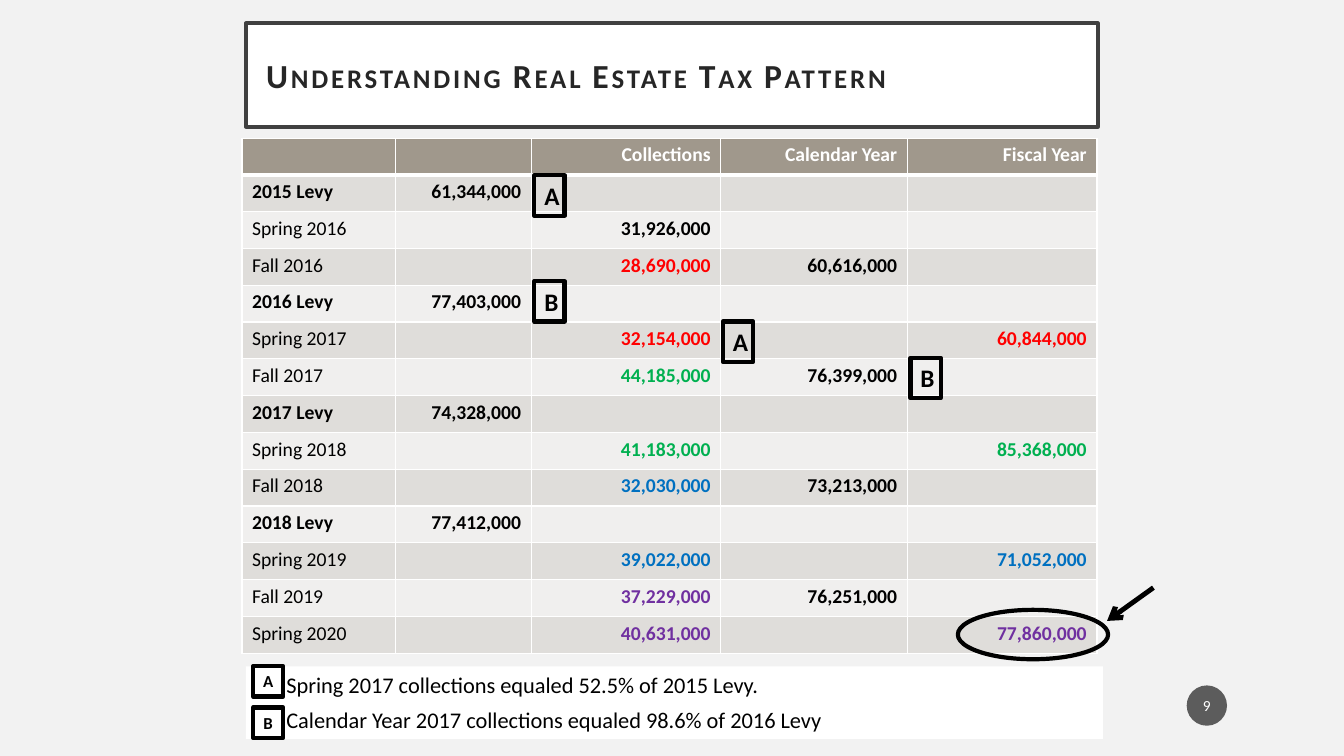
from dataclasses import dataclass

from lxml import etree
from pptx import Presentation
from pptx.dml.color import RGBColor
from pptx.enum.shapes import MSO_CONNECTOR, MSO_SHAPE
from pptx.enum.text import MSO_ANCHOR, PP_ALIGN
from pptx.oxml.ns import qn
from pptx.util import Pt

RECT, OVAL = MSO_SHAPE.RECTANGLE, MSO_SHAPE.OVAL
LINE = MSO_CONNECTOR.STRAIGHT
LEFT, MID, RIGHT = PP_ALIGN.LEFT, PP_ALIGN.CENTER, PP_ALIGN.RIGHT
TOP, CENTER = MSO_ANCHOR.TOP, MSO_ANCHOR.MIDDLE
PX = 9144  # 100 px to the inch


@dataclass(frozen=True)
class Theme:
    font: str = "Calibri"
    back: str = "F2F2F2"
    white: str = "FFFFFF"
    black: str = "000000"
    frame: str = "404040"
    title: str = "262626"
    badge: str = "1D1D1D"
    head: str = "A0988C"
    bands: tuple[str, str] = ("DFDDDA", "F0EFEE")
    red: str = "FF0000"
    green: str = "00B050"
    blue: str = "0070C0"
    purple: str = "7030A0"
    big: int = 24
    mark: int = 18
    note: int = 16
    cell: int = 14
    key: int = 12
    page: int = 11


T = Theme()


@dataclass(frozen=True)
class Box:
    x: int
    y: int
    w: int
    h: int

    def emu(self) -> tuple[int, ...]:
        return tuple(v * PX for v in (self.x, self.y, self.w, self.h))


@dataclass(frozen=True)
class Row:
    label: str
    levy: str = ""
    paid: str = ""
    year: str = ""
    fiscal: str = ""
    tone: str = T.black


@dataclass(frozen=True)
class Mark:
    letter: str
    box: Box
    size: int


HEADS = ("", "", "Collections", "Calendar Year", "Fiscal Year")
ROWS = (
    Row("2015 Levy", levy="61,344,000"),
    Row("Spring 2016", paid="31,926,000"),
    Row("Fall 2016", paid="28,690,000", year="60,616,000", tone=T.red),
    Row("2016 Levy", levy="77,403,000"),
    Row("Spring 2017", paid="32,154,000", fiscal="60,844,000", tone=T.red),
    Row("Fall 2017", paid="44,185,000", year="76,399,000", tone=T.green),
    Row("2017 Levy", levy="74,328,000"),
    Row("Spring 2018", paid="41,183,000", fiscal="85,368,000", tone=T.green),
    Row("Fall 2018", paid="32,030,000", year="73,213,000", tone=T.blue),
    Row("2018 Levy", levy="77,412,000"),
    Row("Spring 2019", paid="39,022,000", fiscal="71,052,000", tone=T.blue),
    Row("Fall 2019", paid="37,229,000", year="76,251,000", tone=T.purple),
    Row("Spring 2020", paid="40,631,000", fiscal="77,860,000", tone=T.purple),
)
COLS = (152, 135, 188, 185, 188)
MARKS = (
    Mark("A", Box(530, 174, 30, 40), T.mark),
    Mark("B", Box(903, 355, 30, 40), T.mark),
    Mark("B", Box(530, 279, 30, 40), T.mark),
    Mark("A", Box(717, 319, 30, 40), T.mark),
    Mark("A", Box(251, 661, 30, 30), T.key),
    Mark("B", Box(251, 702, 30, 30), T.key),
)
NOTES = ("Spring 2017 collections equaled 52.5% of 2015 Levy.",
         "Calendar Year 2017 collections equaled 98.6% of 2016 Levy")


def rgb(tint: str) -> RGBColor:
    return RGBColor.from_string(tint)


def write(frame, *lines: str, size: int, tint: str = T.black,
          bold: bool = False, align=LEFT, anchor=TOP, after: int = 0,
          pads: tuple[int, int, int, int] = (10, 5, 10, 5),
          caps: bool = False) -> None:
    """Fill a text frame; pads run left, top, right, bottom."""
    frame.word_wrap = True
    frame.vertical_anchor = anchor
    (frame.margin_left, frame.margin_top,
     frame.margin_right, frame.margin_bottom) = (p * PX for p in pads)
    for i, line in enumerate(lines):
        para = frame.add_paragraph() if i else frame.paragraphs[0]
        para.alignment = align
        if i < len(lines) - 1:
            para.space_after = Pt(after)
        if not line:  # keeps an empty cell from growing its row
            etree.SubElement(para._p, qn("a:endParaRPr"), sz=str(size * 100))
            continue
        run = para.add_run()
        run.text = line
        font = run.font
        font.name, font.size, font.bold = T.font, Pt(size), bold
        font.color.rgb = rgb(tint)
        if caps:
            run._r.rPr.set("cap", "small")
            run._r.rPr.set("spc", "200")


def draw(slide, kind, box: Box, fill: str = "", line: str = "",
         wide: float = 3):
    shape = slide.shapes.add_shape(kind, *box.emu())
    shape.shadow.inherit = False
    if fill:
        shape.fill.solid()
        shape.fill.fore_color.rgb = rgb(fill)
    else:
        shape.fill.background()
    if line:
        shape.line.color.rgb = rgb(line)
        shape.line.width = Pt(wide)
    else:
        shape.line.fill.background()
    return shape


def edge(cell, side: str, wide: int) -> None:
    ln = etree.SubElement(cell._tc.get_or_add_tcPr(), qn(f"a:ln{side}"),
                          w=str(Pt(wide)))
    fill = etree.SubElement(ln, qn("a:solidFill"))
    etree.SubElement(fill, qn("a:srgbClr"), val=T.white)


def grid(slide, box: Box) -> None:
    count = len(ROWS) + 1
    table = slide.shapes.add_table(count, len(COLS), *box.emu()).table
    table.horz_banding = False
    for col, wide in zip(table.columns, COLS):
        col.width = wide * PX
    for row in table.rows:
        row.height = box.h * PX // count
    texts = [HEADS] + [(r.label, r.levy, r.paid, r.year, r.fiscal)
                       for r in ROWS]
    for i, line in enumerate(texts):
        tone = ROWS[i - 1].tone if i else T.white
        plain = T.black if i else T.white
        tints = (plain, plain, tone, plain, tone)
        for j, text in enumerate(line):
            cell = table.cell(i, j)
            for side in "LRTB":
                thick = (i, side) in ((0, "B"), (1, "T"))
                edge(cell, side, 3 if thick else 1)
            cell.fill.solid()
            cell.fill.fore_color.rgb = rgb(T.bands[(i - 1) % 2] if i
                                           else T.head)
            write(cell.text_frame, text, size=T.cell, tint=tints[j],
                  bold=j > 0 or "Levy" in text, align=RIGHT if j else LEFT)


def arrow(slide, x1: int, y1: int, x2: int, y2: int) -> None:
    ends = (v * PX for v in (x1, y1, x2, y2))
    link = slide.shapes.add_connector(LINE, *ends)
    link.line.color.rgb = rgb(T.black)
    link.line.width = Pt(3.5)
    etree.SubElement(link.line._get_or_add_ln(), qn("a:tailEnd"),
                     type="arrow")
    etree.SubElement(link._element.spPr, qn("a:effectLst"))


def main() -> None:
    deck = Presentation()
    deck.slide_width, deck.slide_height = 1333 * PX, 750 * PX
    slide = deck.slides.add_slide(deck.slide_layouts[6])
    slide.background.fill.solid()
    slide.background.fill.fore_color.rgb = rgb(T.back)

    # Title
    title = draw(slide, RECT, Box(244, 23, 845, 103), T.white, T.frame, 2.5)
    write(title.text_frame, "Understanding Real Estate Tax Pattern",
          size=T.big, tint=T.title, bold=True, align=MID, anchor=CENTER,
          pads=(20, 20, 122, 20), caps=True)

    # Levy table
    grid(slide, Box(240, 137, 848, 511))

    # Page number
    badge = draw(slide, OVAL, Box(1177, 680, 40, 40), T.badge)
    shade = badge._element.spPr.find(".//" + qn("a:srgbClr"))
    etree.SubElement(shade, qn("a:alpha"), val="70000")
    write(badge.text_frame, "9", size=T.page, tint=T.white, align=MID,
          anchor=CENTER, pads=(2, 5, 2, 5))

    # Notes
    notes = draw(slide, RECT, Box(244, 661, 850, 72), T.white)
    write(notes.text_frame, *NOTES, size=T.note, after=6,
          pads=(40, 5, 10, 5))

    # Highlight and letter marks
    draw(slide, OVAL, Box(950, 605, 149, 49), line=T.black)
    arrow(slide, 1144, 583, 1098, 616)
    for mark in MARKS:
        shape = draw(slide, RECT, mark.box, line=T.black)
        write(shape.text_frame, mark.letter, size=mark.size, bold=True,
              align=MID)

    deck.save("out.pptx")


if __name__ == "__main__":
    main()
